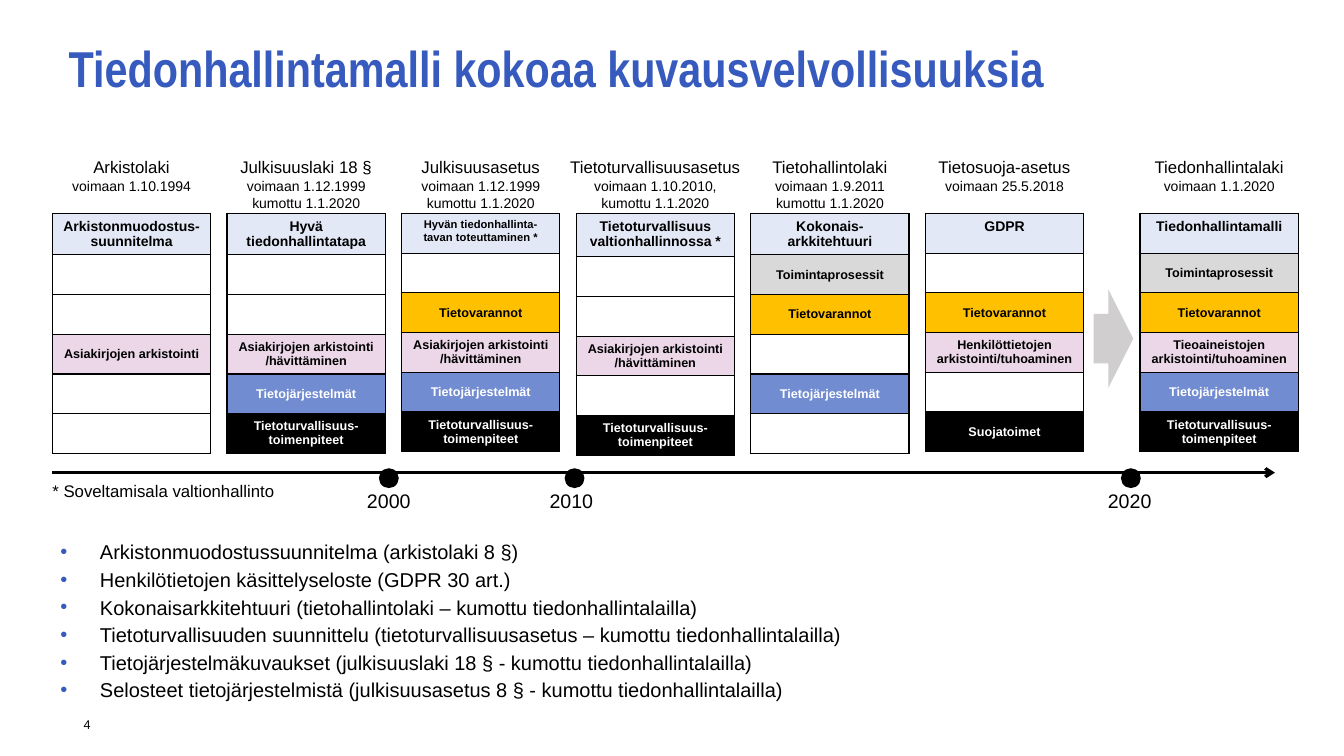
from pptx import Presentation
from pptx.dml.color import RGBColor
from pptx.enum.shapes import MSO_CONNECTOR, MSO_SHAPE
from pptx.enum.text import MSO_ANCHOR, MSO_AUTO_SIZE, PP_ALIGN
from pptx.oxml.ns import qn
from pptx.util import Cm, Pt
from lxml import etree

LEFT, CENTER = PP_ALIGN.LEFT, PP_ALIGN.CENTER
TOP, MIDDLE = MSO_ANCHOR.TOP, MSO_ANCHOR.MIDDLE
BLACK, WHITE, BLUE, HEADER_FILL = "000000", "FFFFFF", "365ABD", "E3E8F6"

TITLE = "Tiedonhallintamalli kokoaa kuvausvelvollisuuksia"
FOOTNOTE = "* Soveltamisala valtionhallinto"
PAGE_NUMBER = "4"

# Fill and text colour of each kind of description, one table row each
ROW_COLORS = [("D9D9D9", BLACK), ("FFC000", BLACK), ("ECD7E9", BLACK),
              ("728CD1", WHITE), (BLACK, WHITE)]

PROCESSES, STORES, SYSTEMS = "Toimintaprosessit", "Tietovarannot", "Tietojärjestelmät"
ARCHIVING = "Asiakirjojen arkistointi /hävittäminen"
SECURITY = "Tietoturvallisuus-toimenpiteet"

# Law, dates, heading, heading size, heading height (cm), the five rows
LAWS = [
    ("Arkistolaki", ["voimaan 1.10.1994"],
     "Arkistonmuodostus-suunnitelma", 10, 1,
     ["", "", "Asiakirjojen arkistointi", "", ""]),
    ("Julkisuuslaki 18 §", ["voimaan 1.12.1999 kumottu 1.1.2020"],
     "Hyvä tiedonhallintatapa", 10, 1,
     ["", "", ARCHIVING, SYSTEMS, SECURITY]),
    ("Julkisuusasetus", ["voimaan 1.12.1999 kumottu 1.1.2020"],
     "Hyvän tiedonhallinta-tavan toteuttaminen *", 8, 1,
     ["", STORES, ARCHIVING, SYSTEMS, SECURITY]),
    ("Tietoturvallisuusasetus", ["voimaan 1.10.2010,", "kumottu 1.1.2020"],
     "Tietoturvallisuus valtionhallinnossa *", 10, 1.09,
     ["", "", ARCHIVING, "", SECURITY]),
    ("Tietohallintolaki", ["voimaan 1.9.2011", "kumottu 1.1.2020"],
     "Kokonais-arkkitehtuuri", 10, 1,
     [PROCESSES, STORES, "", SYSTEMS, ""]),
    ("Tietosuoja-asetus", ["voimaan 25.5.2018"],
     "GDPR", 10, 1,
     ["", STORES, "Henkilöttietojen arkistointi/tuhoaminen", "", "Suojatoimet"]),
    ("Tiedonhallintalaki", ["voimaan 1.1.2020"],
     "Tiedonhallintamalli", 10, 1,
     [PROCESSES, STORES, "Tieoaineistojen arkistointi/tuhoaminen", SYSTEMS, SECURITY]),
]

# Year, dot centre and label centre (cm)
YEARS = [("2000", 9.8, 9.8), ("2010", 14.48, 14.4), ("2020", 28.5, 28.47)]

BULLETS = [
    "Arkistonmuodostussuunnitelma (arkistolaki 8 §)",
    "Henkilötietojen käsittelyseloste (GDPR 30 art.)",
    "Kokonaisarkkitehtuuri (tietohallintolaki – kumottu tiedonhallintalailla)",
    "Tietoturvallisuuden suunnittelu (tietoturvallisuusasetus – kumottu tiedonhallintalailla)",
    "Tietojärjestelmäkuvaukset (julkisuuslaki 18 § - kumottu tiedonhallintalailla)",
    "Selosteet tietojärjestelmistä (julkisuusasetus 8 § - kumottu tiedonhallintalailla)",
]

# Layout in centimetres
FIRST_LEFT, PITCH, GOAL_LEFT, COLUMN_WIDTH = 1.32, 4.4, 28.73, 3.99
LAW_TOP, TABLE_TOP, ROW_HEIGHT = 3.96, 5.38, 1
LAW_LABEL_WIDTH = 4.34
AXIS_Y, DOT = 11.91, 0.5
DOT_TOP, YEAR_TOP, YEAR_WIDTH = 11.8, 12.32, 1.73


def color(value):
    return RGBColor.from_string(value)


def style(paragraph, size, ink=BLACK, bold=False, align=LEFT, font="Arial"):
    paragraph.alignment = align
    paragraph.font.size = Pt(size)
    paragraph.font.name = font
    paragraph.font.bold = bold
    paragraph.font.color.rgb = color(ink)


def prepare_frame(shape, anchor=TOP):
    """Remove insets and fix the text frame's size and anchor."""
    frame = shape.text_frame
    frame.margin_left = frame.margin_right = frame.margin_top = frame.margin_bottom = 0
    frame.word_wrap = True
    frame.auto_size = MSO_AUTO_SIZE.NONE
    frame.vertical_anchor = anchor
    return frame


def place(shape, left, top, width, height):
    shape.left, shape.top, shape.width, shape.height = map(Cm, (left, top, width, height))


def add_label(page, left, top, width, height, lines, sizes, align=LEFT, anchor=TOP):
    box = page.shapes.add_textbox(Cm(left), Cm(top), Cm(width), Cm(height))
    frame = prepare_frame(box, anchor)
    frame.text = "\n".join(lines)
    for para, size in zip(frame.paragraphs, sizes):
        style(para, size, align=align)


def add_solid_shape(page, kind, left, top, width, height, fill):
    shape = page.shapes.add_shape(kind, Cm(left), Cm(top), Cm(width), Cm(height))
    shape.shadow.inherit = False
    shape.fill.solid()
    shape.fill.fore_color.rgb = color(fill)
    shape.line.fill.background()
    return shape


def fill_cell(cell, text, size, fill, ink, anchor):
    properties = cell._tc.get_or_add_tcPr()
    for side in ("lnL", "lnR", "lnT", "lnB"):
        border = etree.SubElement(properties, qn(f"a:{side}"), w=str(Pt(1)))
        paint = etree.SubElement(border, qn("a:solidFill"))
        etree.SubElement(paint, qn("a:srgbClr"), val=BLACK)
    cell.fill.solid()
    cell.fill.fore_color.rgb = color(fill)
    cell.vertical_anchor = anchor
    cell.text_frame.text = text
    style(cell.text_frame.paragraphs[0], size, ink, True, CENTER)


def add_law(page, left, law):
    name, dates, heading, heading_size, heading_height, rows = law
    label_left = left - (LAW_LABEL_WIDTH - COLUMN_WIDTH) / 2
    # Only the longest name needs more than the column's width
    wide = len(name) > 20
    add_label(page, label_left if wide else left, LAW_TOP,
              LAW_LABEL_WIDTH if wide else COLUMN_WIDTH, 1.37,
              [name] + dates, [12] + [10] * len(dates), CENTER)
    height = heading_height + ROW_HEIGHT * len(rows)
    table = page.shapes.add_table(len(rows) + 1, 1, Cm(left), Cm(TABLE_TOP),
                                  Cm(COLUMN_WIDTH), Cm(height)).table
    table.first_row = table.horz_banding = False
    for row in table.rows:
        row.height = Cm(ROW_HEIGHT)
    table.rows[0].height = Cm(heading_height)
    fill_cell(table.cell(0, 0), heading, heading_size, HEADER_FILL, BLACK, TOP)
    for index, (text, (fill, ink)) in enumerate(zip(rows, ROW_COLORS), 1):
        fill_cell(table.cell(index, 0), text, 9, fill if text else WHITE, ink, MIDDLE)


def add_timeline(page):
    axis = page.shapes.add_connector(MSO_CONNECTOR.STRAIGHT, Cm(FIRST_LEFT), Cm(AXIS_Y),
                                     Cm(32.13), Cm(AXIS_Y))
    axis.line.color.rgb = color(BLACK)
    axis.line.width = Pt(2.25)
    etree.SubElement(axis.line._get_or_add_ln(), qn("a:tailEnd"), type="arrow")
    etree.SubElement(axis._element.spPr, qn("a:effectLst"))
    for year, dot_center, label_center in YEARS:
        add_solid_shape(page, MSO_SHAPE.OVAL, dot_center - DOT / 2, DOT_TOP, DOT, DOT, BLACK)
        add_label(page, label_center - YEAR_WIDTH / 2, YEAR_TOP, YEAR_WIDTH, 0.6,
                  [year], [14], CENTER)


def fill_bullets(body):
    place(body, 1.52, 13.72, 31.6, 4.22)
    frame = prepare_frame(body)
    frame.text = "\n".join(BULLETS)
    for index, para in enumerate(frame.paragraphs):
        properties = para._p.get_or_add_pPr()
        properties.set("marL", str(Cm(1)))
        properties.set("indent", str(-Cm(1)))
        bullet_color = etree.SubElement(properties, qn("a:buClr"))
        etree.SubElement(bullet_color, qn("a:srgbClr"), val=BLUE)
        etree.SubElement(properties, qn("a:buChar"), char="•")
        style(para, 14.3)
        para.line_spacing = 0.8
        para.space_before = Pt(6 if index else 0)


def main():
    deck = Presentation()
    deck.slide_width, deck.slide_height = Cm(33.87), Cm(19.05)
    page = deck.slides.add_slide(deck.slide_layouts[1])

    title, body = page.placeholders
    place(title, 1.73, 1.12, 30.63, 2.29)
    frame = prepare_frame(title)
    frame.text = TITLE
    style(frame.paragraphs[0], 36, BLUE, True, font="Arial Narrow")
    frame.paragraphs[0].line_spacing = 0.9
    fill_bullets(body)

    for index, law in enumerate(LAWS[:-1]):
        add_law(page, FIRST_LEFT + index * PITCH, law)
    add_law(page, GOAL_LEFT, LAWS[-1])

    arrow = add_solid_shape(page, MSO_SHAPE.RIGHT_ARROW, 27.56, 7.29, 1, 2.49, "D0CECE")
    arrow.adjustments[1] = 0.63
    add_timeline(page)
    add_label(page, FIRST_LEFT, 12.12, 6.83, 0.51, [FOOTNOTE], [12])
    add_label(page, 2.11, 17.91, 0.91, 0.69, [PAGE_NUMBER], [9], anchor=MIDDLE)
    deck.save("out.pptx")


if __name__ == "__main__":
    main()
